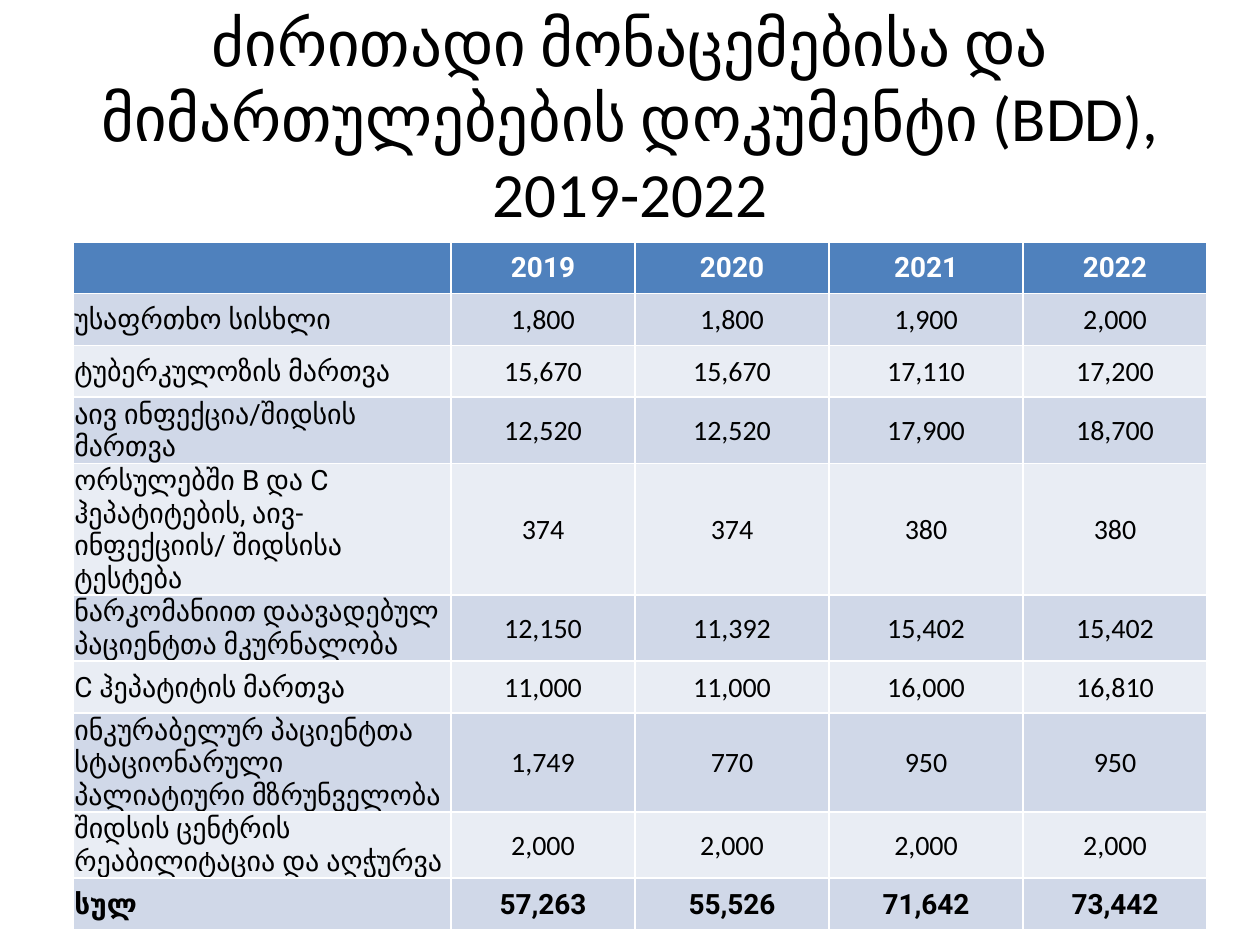
"""Build the slide with the budget table for 2019-2022."""
from dataclasses import dataclass

from pptx import Presentation
from pptx.dml.color import RGBColor as Rgb
from pptx.enum.text import MSO_ANCHOR as Anchor, MSO_AUTO_SIZE as Fit, PP_ALIGN as Align
from pptx.util import Inches, Pt

WIDE, HIGH = Inches(10), Inches(7.5)
TITLE = "ძირითადი მონაცემებისა და მიმართულებების დოკუმენტი (BDD), 2019-2022"


@dataclass(frozen=True)
class Theme:
    head: str = "4F81BD"
    odd: str = "D0D8E8"
    even: str = "E9EDF4"
    ink: str = "000000"
    pale: str = "FFFFFF"
    plain: str = "Calibri"
    strong: str = "Roboto"
    big: int = 36
    small: int = 16


@dataclass(frozen=True)
class Row:
    label: str
    sums: tuple[str, ...]
    bold: bool = False


@dataclass(frozen=True)
class Look:
    face: str
    size: int
    ink: str
    bold: bool
    align: Align


@dataclass(frozen=True)
class Box:
    left: float
    top: float
    wide: float
    high: float

    def place(self) -> tuple[int, ...]:
        return tuple(round(part * side) for part, side in zip(
            (self.left, self.top, self.wide, self.high), (WIDE, HIGH) * 2))


THEME = Theme()
HEADING = Box(0.05, 0.04, 0.9, 0.167)
GRID = Box(0.058, 0.256, 0.9, 0.547)
COLUMNS = (0.3, 0.146, 0.154, 0.154, 0.146)
ROWS = (
    Row("", ("2019", "2020", "2021", "2022"), True),
    Row("უსაფრთხო სისხლი", ("1,800", "1,800", "1,900", "2,000")),
    Row("ტუბერკულოზის მართვა", ("15,670", "15,670", "17,110", "17,200")),
    Row("აივ ინფექცია/შიდსის მართვა", ("12,520", "12,520", "17,900", "18,700")),
    Row("ორსულებში B და C ჰეპატიტების, აივ-ინფექციის/ შიდსისა ტესტება",
        ("374", "374", "380", "380")),
    Row("ნარკომანიით დაავადებულ პაციენტთა მკურნალობა",
        ("12,150", "11,392", "15,402", "15,402")),
    Row("C ჰეპატიტის მართვა", ("11,000", "11,000", "16,000", "16,810")),
    Row("ინკურაბელურ პაციენტთა სტაციონარული პალიატიური მზრუნველობა",
        ("1,749", "770", "950", "950")),
    Row("შიდსის ცენტრის რეაბილიტაცია და აღჭურვა",
        ("2,000", "2,000", "2,000", "2,000")),
    Row("სულ", ("57,263", "55,526", "71,642", "73,442"), True),
)


def write(frame, text: str, look: Look) -> None:
    frame.text = text
    line = frame.paragraphs[0]
    line.alignment = look.align
    font = line.font
    font.name, font.size, font.bold = look.face, Pt(look.size), look.bold
    font.color.rgb = Rgb.from_string(look.ink)


def draw_title(slide) -> None:
    title = slide.shapes.title
    title.left, title.top, title.width, title.height = HEADING.place()
    frame = title.text_frame
    frame.auto_size = Fit.NONE
    frame.vertical_anchor = Anchor.MIDDLE
    write(frame, TITLE, Look(THEME.plain, THEME.big, THEME.ink, False, Align.CENTER))


def fill_cell(cell, text: str, fill: str, look: Look) -> None:
    cell.fill.solid()
    cell.fill.fore_color.rgb = Rgb.from_string(fill)
    cell.vertical_anchor = Anchor.MIDDLE
    cell.margin_left = cell.margin_top = cell.margin_right = Inches(0.01)
    cell.margin_bottom = 0
    write(cell.text_frame, text, look)


def draw_row(table, index: int, row: Row) -> None:
    fill = THEME.head if index == 0 else (THEME.even, THEME.odd)[index % 2]
    ink = THEME.pale if index == 0 else THEME.ink
    for column, text in enumerate((row.label, *row.sums)):
        first = column == 0
        face = THEME.strong if first or row.bold else THEME.plain
        align = Align.LEFT if first else Align.CENTER
        fill_cell(table.cell(index, column), text, fill,
                  Look(face, THEME.small, ink, row.bold, align))


def draw_table(slide) -> None:
    table = slide.shapes.add_table(len(ROWS), len(COLUMNS), *GRID.place()).table
    for column, share in zip(table.columns, COLUMNS):
        column.width = round(share * WIDE)
    for index, row in enumerate(ROWS):
        draw_row(table, index, row)


def main() -> None:
    deck = Presentation()
    deck.slide_width, deck.slide_height = WIDE, HIGH
    slide = deck.slides.add_slide(deck.slide_layouts.get_by_name("Title Only"))
    draw_title(slide)
    draw_table(slide)
    deck.save("out.pptx")


if __name__ == "__main__":
    main()
